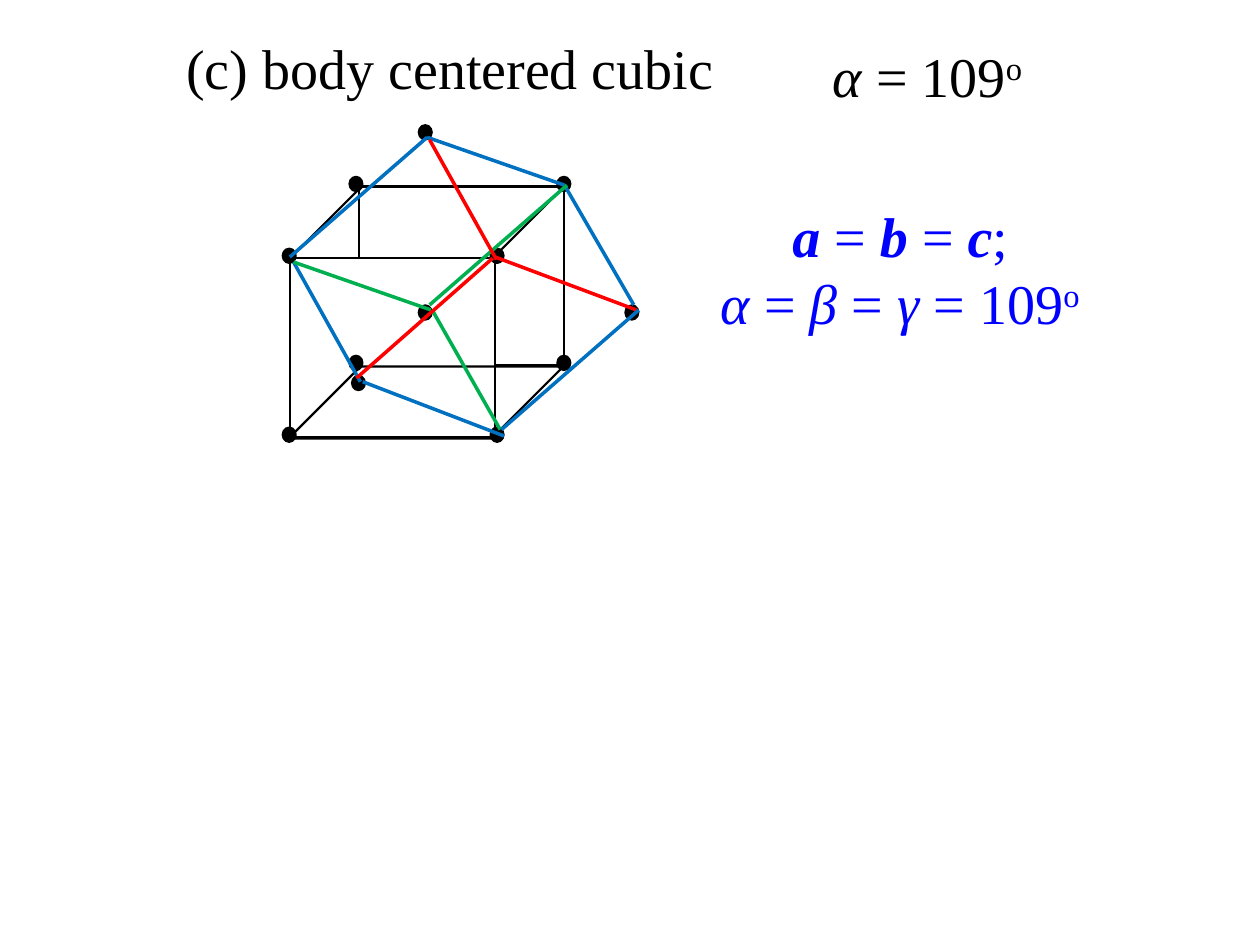
from pptx import Presentation
from pptx.dml.color import RGBColor
from pptx.enum.shapes import MSO_CONNECTOR, MSO_SHAPE
from pptx.enum.text import MSO_ANCHOR, MSO_AUTO_SIZE, PP_ALIGN
from pptx.oxml.ns import qn
from pptx.util import Inches, Pt
from lxml import etree

BLACK = RGBColor(0x00, 0x00, 0x00)
WHITE = RGBColor(0xFF, 0xFF, 0xFF)
BLUE = RGBColor(0x00, 0x70, 0xC0)
RED = RGBColor(0xFF, 0x00, 0x00)
GREEN = RGBColor(0x00, 0xB0, 0x50)
FORMULA_BLUE = RGBColor(0x00, 0x00, 0xFF)

prs = Presentation()
prs.slide_width, prs.slide_height = Inches(10), Inches(7.5)
slide = prs.slides.add_slide(prs.slide_layouts[6])


def add_label(box, lines, color, align=PP_ALIGN.LEFT, anchor=MSO_ANCHOR.TOP):
    """Each line lists (text, style); style holds b(old), i(talic), ^(superscript)."""
    frame = slide.shapes.add_textbox(*map(Inches, box)).text_frame
    frame.word_wrap = False
    frame.auto_size = MSO_AUTO_SIZE.SHAPE_TO_FIT_TEXT
    frame.vertical_anchor = anchor
    for number, line in enumerate(lines):
        paragraph = frame.add_paragraph() if number else frame.paragraphs[0]
        paragraph.alignment = align
        for text, style in line:
            run = paragraph.add_run()
            run.text = text
            run.font.name, run.font.size = "Times New Roman", Pt(32)
            run.font.color.rgb = color
            run.font.bold, run.font.italic = "b" in style, "i" in style
            if "^" in style:
                run.font._element.set("baseline", "30000")


def add_solid(kind, box, fill, width):
    solid = lattice.shapes.add_shape(kind, *map(Inches, box))
    solid.shadow.inherit = False
    if fill is None:
        solid.fill.background()
    else:
        solid.fill.solid()
        solid.fill.fore_color.rgb = fill
    solid.line.color.rgb = BLACK
    solid.line.width = Pt(width)
    return solid


# Headings
add_label((1.38, 0.21, 4.54, 0.64), [[("(c) body centered cubic", "")]], BLACK,
          anchor=MSO_ANCHOR.MIDDLE)
add_label((6.51, 0.28, 1.78, 0.64),
          [[("α ", "i"), ("= 109", ""), ("o", "^")]], BLACK)

# Faces of the cube, back to front
lattice = slide.shapes.add_group_shape()
for kind, box, fill in [
    (MSO_SHAPE.PARALLELOGRAM, (2.3, 1.48, 2.18, 0.57), WHITE),
    (MSO_SHAPE.RECTANGLE, (2.85, 1.48, 1.63, 1.42), None),
    (MSO_SHAPE.RECTANGLE, (2.3, 2.05, 1.63, 1.42), WHITE),
    (MSO_SHAPE.PARALLELOGRAM, (2.29, 2.91, 2.18, 0.57), None),
]:
    face = add_solid(kind, box, fill, 1.25)
    if kind == MSO_SHAPE.PARALLELOGRAM:
        face.adjustments[0] = 1

# Lattice points: cube corners, then body centres
corners = [(x + dx, y + dy) for y in (1.97, 3.39)
           for dx, dy in ((0.53, -0.57), (0, 0)) for x in (3.89, 2.24)]
centres = [(4.96, 2.42), (3.32, 2.42), (3.32, 0.99), (2.79, 2.98)]
for x, y in corners + centres:
    add_solid(MSO_SHAPE.OVAL, (x, y, 0.11, 0.12), BLACK, 0.75)

# Edges of the primitive cell
for color, *ends in [
    (BLUE, 4.48, 1.47, 3.39, 1.09),
    (RED, 3.93, 2.04, 5.05, 2.46),
    (BLUE, 4.48, 1.47, 5.03, 2.42),
    (BLUE, 2.33, 2.08, 2.86, 3.03),
    (GREEN, 3.42, 2.46, 2.33, 2.08),
    (GREEN, 3.41, 2.42, 4.5, 1.47),
    (BLUE, 2.88, 3.03, 4, 3.46),
    (GREEN, 3.43, 2.46, 3.97, 3.41),
    (BLUE, 2.3, 2.04, 3.39, 1.09),
    (RED, 2.83, 3, 3.91, 2.05),
    (BLUE, 3.98, 3.41, 5.07, 2.46),
    (RED, 3.41, 1.11, 3.94, 2.06),
]:
    edge = lattice.shapes.add_connector(MSO_CONNECTOR.STRAIGHT, *map(Inches, ends))
    edge.line.color.rgb = color
    edge.line.width = Pt(2)
    etree.SubElement(edge._element.spPr, qn("a:effectLst"))

# Cell parameters
add_label((5.56, 1.55, 3.17, 1.18), [
    [("a", "bi"), (" = ", ""), ("b ", "bi"), ("= ", ""), ("c", "bi"), (";", "")],
    [("α", "i"), (" = ", ""), ("β", "i"), (" = ", ""), ("γ ", "i"),
     ("= 109", ""), ("o", "^")],
], FORMULA_BLUE, PP_ALIGN.CENTER)

prs.save("out.pptx")
